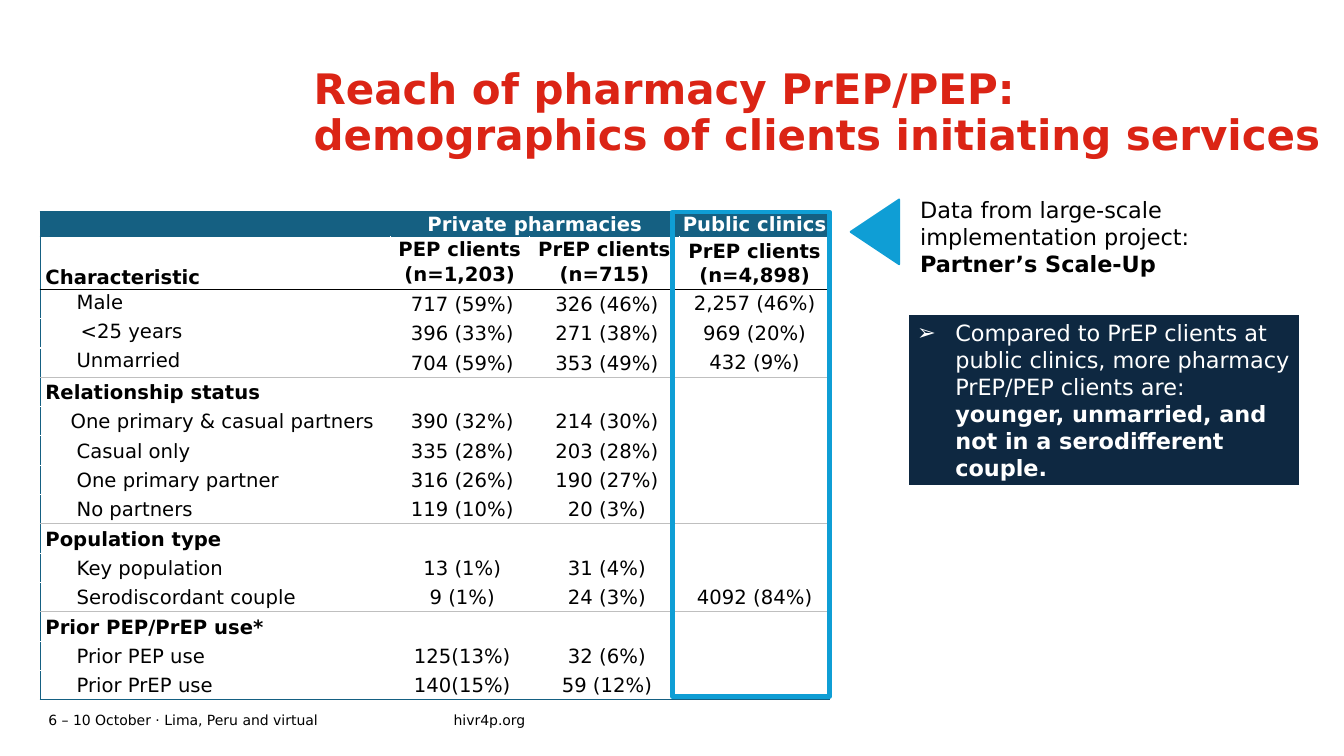
from lxml import etree
from pptx import Presentation
from pptx.dml.color import RGBColor
from pptx.enum.shapes import MSO_SHAPE
from pptx.enum.text import MSO_ANCHOR, PP_ALIGN
from pptx.oxml.ns import qn
from pptx.util import Inches, Pt

TOP, MIDDLE, BOTTOM = MSO_ANCHOR.TOP, MSO_ANCHOR.MIDDLE, MSO_ANCHOR.BOTTOM
LEFT, CENTER = PP_ALIGN.LEFT, PP_ALIGN.CENTER
RECTANGLE, TRIANGLE = MSO_SHAPE.RECTANGLE, MSO_SHAPE.ISOSCELES_TRIANGLE
BLACK = RGBColor(0x00, 0x00, 0x00)
WHITE = RGBColor(0xFF, 0xFF, 0xFF)
GREY = RGBColor(0xBF, 0xBF, 0xBF)
TEAL = RGBColor(0x15, 0x60, 0x82)
SKY = RGBColor(0x0F, 0x9E, 0xD5)
NAVY = RGBColor(0x0E, 0x28, 0x41)
RED = RGBColor(0xDB, 0x24, 0x15)

deck = Presentation()
deck.slide_width, deck.slide_height = Inches(13.33), Inches(7.5)
slide = deck.slides.add_slide(deck.slide_layouts[6])
ACROSS, DOWN = deck.slide_width / 100, deck.slide_height / 100


def share(left, top, width, height):
    return [round(n * unit) for n, unit in zip((left, top, width, height), (ACROSS, DOWN) * 2)]


def write(frame, paragraphs, size, color, align=LEFT, spacing=None):
    for index, runs in enumerate(paragraphs):
        paragraph = frame.add_paragraph() if index else frame.paragraphs[0]
        paragraph.alignment, paragraph.line_spacing = align, spacing
        for words, bold in runs:
            run = paragraph.add_run()
            run.text = words
            run.font.color.rgb = color
            style = {"name": "DejaVu Sans", "size": Pt(size), "bold": bold}
            for attribute, value in style.items():
                setattr(run.font, attribute, value)


for words, area, size, color, bold, spacing, anchor in [
    ("6 – 10 October · Lima, Peru and virtual", (3.6, 93.6, 30.15, 3.2), 10, BLACK, False, None, MIDDLE),
    ("hivr4p.org", (33.75, 93.6, 14.48, 3.2), 10, BLACK, False, None, MIDDLE),
    ("Reach of pharmacy PrEP/PEP: demographics of clients initiating services",
     (23.33, 9.07, 76.13, 17.87), 30, RED, True, 0.9, TOP),
]:
    frame = slide.shapes.add_textbox(*share(*area)).text_frame
    layout = {"word_wrap": True, "vertical_anchor": anchor, "margin_left": 0,
              "margin_right": 0, "margin_top": 0, "margin_bottom": 0}
    for attribute, value in layout.items():
        setattr(frame, attribute, value)
    write(frame, [[(words, bold)]], size, color, spacing=spacing)

demographics = [
    ("", "Private pharmacies", "", "Public clinics"),
    ("Characteristic", "PEP clients\n(n=1,203)", "PrEP clients\n(n=715)", "PrEP clients\n(n=4,898)"),
    ("Male", "717 (59%)", "326 (46%)", "2,257 (46%)"),
    ("<25 years", "396 (33%)", "271 (38%)", "969 (20%)"),
    ("Unmarried", "704 (59%)", "353 (49%)", "432 (9%)"),
    ("Relationship status", "", "", ""),
    ("One primary & casual partners", "390 (32%)", "214 (30%)", ""),
    ("Casual only", "335 (28%)", "203 (28%)", ""),
    ("One primary partner", "316 (26%)", "190 (27%)", ""),
    ("No partners", "119 (10%)", "20 (3%)", ""),
    ("Population type", "", "", ""),
    ("Key population", "13 (1%)", "31 (4%)", ""),
    ("Serodiscordant couple", "9 (1%)", "24 (3%)", "4092 (84%)"),
    ("Prior PEP/PrEP use*", "", "", ""),
    ("Prior PEP use", "125(13%)", "32 (6%)", ""),
    ("Prior PrEP use", "140(15%)", "59 (12%)", ""),
]
SECTIONS = (5, 10, 13)
LAST_ROW, LAST_COLUMN = len(demographics) - 1, 3
rule_colors = {0: TEAL, 1: TEAL, 2: BLACK, len(demographics): TEAL, **dict.fromkeys(SECTIONS, GREY)}
label_indents = {1: 0.05, 3: 0.4, 6: 0.3, **dict.fromkeys(SECTIONS, 0.05)}

table = slide.shapes.add_table(len(demographics), 4, *share(3, 28, 58.74, 64.5)).table
table.first_row = table.horz_banding = False
for column, width in zip(table.columns, (26.03, 10.35, 11.18, 11.18)):
    column.width = round(width * ACROSS)
for r, row in enumerate(table.rows):
    row.height = round({0: 2.8, 1: 6.93}.get(r, 3.88) * DOWN)

for r, entries in enumerate(demographics):
    for c, entry in enumerate(entries):
        cell = table.cell(r, c)
        is_label = c == 0
        inset = label_indents.get(r, 0.36) if is_label else 0.05 if r > 1 and c < LAST_COLUMN else 0
        anchor = MIDDLE
        if c < LAST_COLUMN and r < 2 or is_label and r < 5:
            anchor = BOTTOM if is_label and r == 1 else TOP
        layout = {"margin_left": Inches(inset), "margin_right": 0, "margin_top": 0,
                  "margin_bottom": 0, "vertical_anchor": anchor}
        for attribute, value in layout.items():
            setattr(cell, attribute, value)
        edges = {
            "a:lnL": TEAL if is_label else WHITE,
            "a:lnR": TEAL if c == LAST_COLUMN else WHITE,
            "a:lnT": rule_colors.get(r, WHITE),
            "a:lnB": rule_colors.get(r + 1, WHITE),
        }
        if r < 2:
            edges["a:lnL"] = TEAL if is_label or r == 0 else WHITE
            edges["a:lnR"] = TEAL if c == LAST_COLUMN or r == 0 else WHITE
        for tag, color in edges.items():
            edge = etree.SubElement(cell._tc.get_or_add_tcPr(), qn(tag), w=str(Pt(1)))
            paint = etree.SubElement(edge, qn("a:solidFill"))
            etree.SubElement(paint, qn("a:srgbClr"), val=str(color))
        cell.fill.solid()
        cell.fill.fore_color.rgb = TEAL if r == 0 else WHITE
        if entry:
            bold = r < 2 or r in SECTIONS
            write(cell.text_frame, [[(line, bold)] for line in entry.split("\n")], 14,
                  WHITE if r == 0 else BLACK, LEFT if is_label else CENTER,
                  None if c == LAST_COLUMN and r > 1 else 1.07)
        else:
            cell.text_frame.paragraphs[0].font.size = Pt(12)

table.cell(0, 1).merge(table.cell(0, 2))
for r in SECTIONS[:2]:
    table.cell(r, 0).merge(table.cell(r, 2))

panels = []
for kind, area, fill, line, weight, turn in [
    (RECTANGLE, (67.5, 41.47, 29.25, 22.93), NAVY, WHITE, 2, 0),
    (RECTANGLE, (67.73, 25.33, 27.68, 12.13), WHITE, None, 0, 0),
    (TRIANGLE, (62.7, 27.47, 4.8, 6.4), SKY, SKY, 1.5, 270),
    (RECTANGLE, (50.03, 28, 11.7, 64.13), None, SKY, 3, 0),
]:
    panel = slide.shapes.add_shape(kind, *share(*area))
    panel.shadow.inherit = False
    panel.rotation = turn
    if fill is None:
        panel.fill.background()
    else:
        panel.fill.solid()
        panel.fill.fore_color.rgb = fill
    if line is None:
        panel.line.fill.background()
    else:
        panel.line.color.rgb = line
        panel.line.width = Pt(weight)
    panels.append(panel)

takeaway, project = (panel.text_frame for panel in panels[:2])
takeaway.word_wrap = project.word_wrap = True
takeaway.vertical_anchor, project.vertical_anchor = MIDDLE, TOP
bullet = takeaway.paragraphs[0]._p.get_or_add_pPr()
bullet.set("marL", str(Inches(0.38)))
bullet.set("indent", str(-Inches(0.38)))
etree.SubElement(bullet, qn("a:buFont"), typeface="DejaVu Sans")
etree.SubElement(bullet, qn("a:buChar"), char="➢")
takeaway.paragraphs[0].space_after = Pt(6)
write(takeaway, [[
    ("Compared to PrEP clients at public clinics, more pharmacy PrEP/PEP clients are: ", False),
    ("younger, unmarried, and not in a serodifferent couple.", True),
]], 16, WHITE)
write(project, [[
    ("Data from large-scale implementation project: ", False),
    ("Partner’s Scale-Up", True),
]], 16, BLACK)

deck.save("out.pptx")
